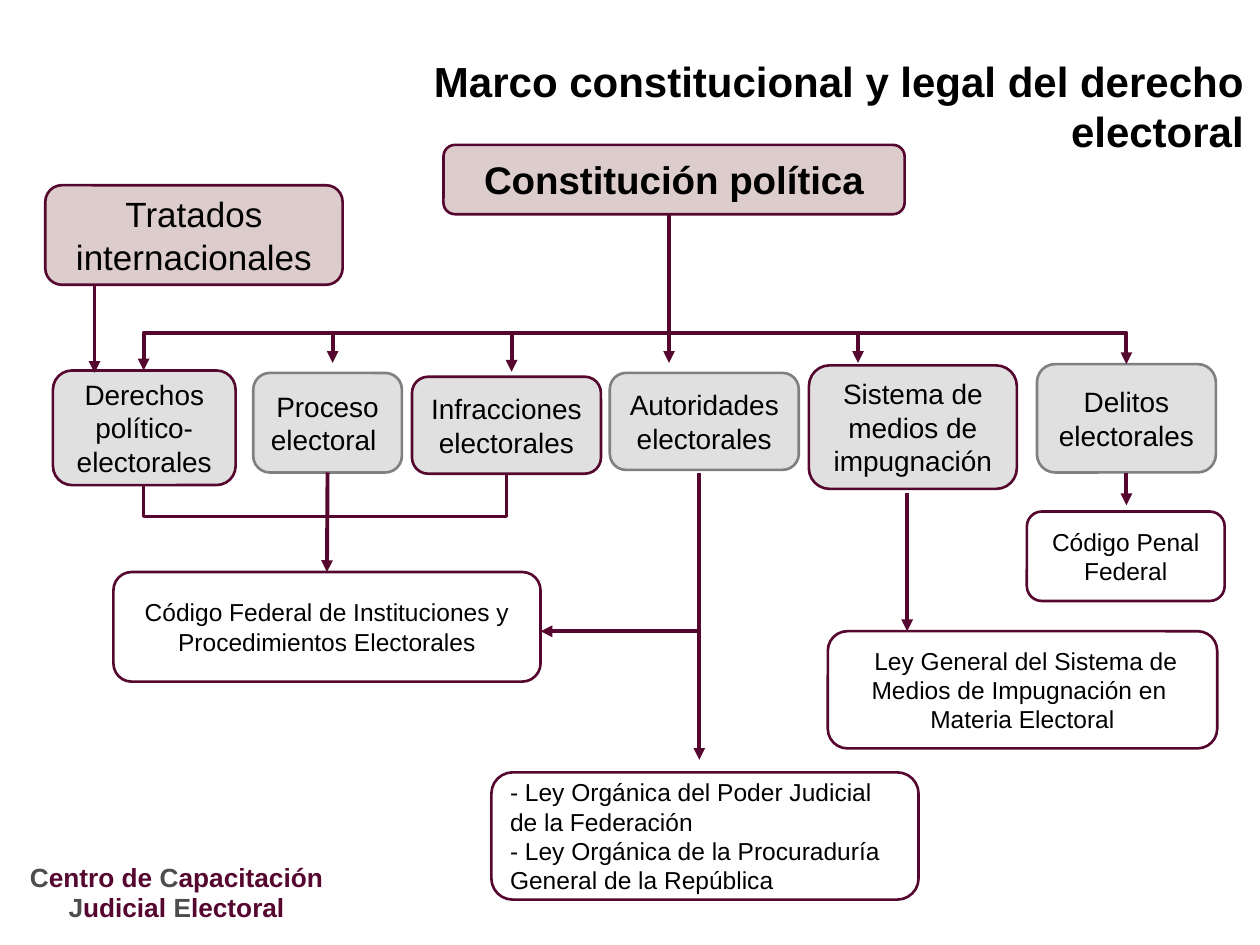
from dataclasses import dataclass

from lxml import etree
from pptx import Presentation
from pptx.dml.color import RGBColor
from pptx.enum.shapes import MSO_CONNECTOR, MSO_SHAPE
from pptx.enum.text import MSO_ANCHOR, PP_ALIGN
from pptx.oxml.ns import qn
from pptx.util import Inches, Pt

LINE, ELBOW = MSO_CONNECTOR.STRAIGHT, MSO_CONNECTOR.ELBOW
ROUND = MSO_SHAPE.ROUNDED_RECTANGLE
MIDDLE, TOP = MSO_ANCHOR.MIDDLE, MSO_ANCHOR.TOP
LEFT, CENTER, RIGHT = PP_ALIGN.LEFT, PP_ALIGN.CENTER, PP_ALIGN.RIGHT


@dataclass(frozen=True)
class Theme:
    font: str = "Arial"
    ink: str = "000000"
    wine: str = "56072F"
    gray: str = "808080"
    dark: str = "4D4D4D"
    rose: tuple = ("580000", 20)
    silver: tuple = ("C0C0C0", 49)
    white: tuple = ("FFFFFF", 100)
    title: int = 24
    head: int = 22
    side: int = 20
    topic: int = 16
    foot: int = 15
    law: int = 14
    edge: float = 1.5
    link: float = 2.25


class Chart:
    def __init__(self, slide, theme):
        self.slide = slide
        self.theme = theme

    def fill_text(self, shape, lines, size, align=CENTER, bold=False, anchor=MIDDLE, space=None):
        frame = shape.text_frame
        frame.word_wrap = True
        frame.vertical_anchor = anchor
        for i, runs in enumerate(lines):
            para = frame.paragraphs[0] if i == 0 else frame.add_paragraph()
            para.alignment = align
            para.line_spacing = space
            for text, color in runs:
                run = para.add_run()
                run.text = text
                run.font.name = self.theme.font
                run.font.size = Pt(size)
                run.font.bold = bold
                run.font.color.rgb = RGBColor.from_string(color)

    def label(self, area, lines, size, align, space=None):
        shape = self.slide.shapes.add_textbox(*map(Inches, area))
        self.fill_text(shape, lines, size, align, True, TOP, space)

    def box(self, area, lines, size, fill, edge=None, align=CENTER, bold=False):
        shape = self.slide.shapes.add_shape(ROUND, *map(Inches, area))
        shape.shadow.inherit = False
        color, alpha = fill
        shape.fill.solid()
        shape.fill.fore_color.rgb = RGBColor.from_string(color)
        if alpha < 100:
            node = shape._element.spPr.find(qn("a:solidFill"))[0]
            etree.SubElement(node, qn("a:alpha")).set("val", str(alpha * 1000))
        shape.line.color.rgb = RGBColor.from_string(edge or self.theme.wine)
        shape.line.width = Pt(self.theme.edge)
        self.fill_text(shape, [[(line, self.theme.ink)] for line in lines], size, align, bold)
        return shape

    def join(self, kind, start, end, ends=(), width=None):
        link = self.slide.shapes.add_connector(kind, *map(Inches, (*start, *end)))
        link.line.color.rgb = RGBColor.from_string(self.theme.wine)
        link.line.width = Pt(width or self.theme.link)
        line = link._element.spPr.find(qn("a:ln"))
        for tag in ends:
            etree.SubElement(line, qn(tag)).set("type", "triangle")
        etree.SubElement(link._element.spPr, qn("a:effectLst"))
        return link

    def arrow(self, start, end, source=None, target=None):
        link = self.join(LINE, start, end, ["a:tailEnd"])
        if source:
            link.begin_connect(source, 2)
        if target:
            link.end_connect(target, 0)

    def fork(self, start, end, bar, ends=(), width=None):
        (x1, y1), (x2, y2) = start, end
        wide, high = y1 - y2, x2 - x1
        left, top = (x1 + x2 - wide) / 2, (y1 + y2 - high) / 2
        link = self.join(ELBOW, (left + wide, top + high), (left, top), ends, width)
        props = link._element.spPr
        props.find(qn("a:xfrm")).set("rot", "5400000")
        guide = etree.SubElement(props.find(qn("a:prstGeom")).find(qn("a:avLst")), qn("a:gd"))
        guide.set("name", "adj1")
        guide.set("fmla", f"val {round((y1 - bar) / wide * 100000)}")


def main():
    deck = Presentation()
    deck.slide_width, deck.slide_height = Inches(10), Inches(7.5)
    theme = Theme()
    chart = Chart(deck.slides.add_slide(deck.slide_layouts[6]), theme)

    dark, wine = theme.dark, theme.wine
    chart.label((0.09, 6.8, 2.62, 0.55), [
        [("C", dark), ("entro de ", wine), ("C", dark), ("apacitación", wine)],
        [("J", dark), ("udicial ", wine), ("E", dark), ("lectoral", wine)],
    ], theme.foot, CENTER, 0.96)
    chart.label((2.17, 0.39, 7.8, 0.9),
                [[("Marco constitucional y legal del derecho electoral", theme.ink)]],
                theme.title, RIGHT)

    chart.box((3.52, 1.15, 3.66, 0.55), ["Constitución política"],
              theme.head, theme.rose, bold=True)
    chart.box((0.36, 1.47, 2.36, 0.79), ["Tratados internacionales"], theme.side, theme.rose)

    topics = [
        ((0.42, 2.94, 1.45, 0.91), "Derechos político-electorales", wine),
        ((2.01, 2.96, 1.18, 0.79), "Proceso electoral ", theme.gray),
        ((3.27, 2.99, 1.5, 0.77), "Infracciones electorales", wine),
        ((4.84, 2.96, 1.5, 0.77), "Autoridades electorales", theme.gray),
        ((6.42, 2.9, 1.65, 0.98), "Sistema de medios de impugnación", wine),
        ((8.23, 2.89, 1.42, 0.86), "Delitos electorales", theme.gray),
    ]
    cells = [chart.box(area, [text], theme.topic, theme.silver, edge)
             for area, text, edge in topics]

    laws = [
        ((0.9, 4.54, 3.39, 0.87),
         ["Código Federal de Instituciones y Procedimientos Electorales"], CENTER),
        ((6.57, 5.01, 3.09, 0.93),
         [" Ley General del Sistema de Medios de Impugnación en ", "Materia Electoral"], CENTER),
        ((8.15, 4.06, 1.57, 0.71), ["Código Penal Federal"], CENTER),
        ((3.9, 6.13, 3.39, 1.01),
         ["- Ley Orgánica del Poder Judicial de la Federación",
          "- Ley Orgánica de la Procuraduría General de la República"], LEFT),
    ]
    codes = [chart.box(area, lines, theme.law, theme.white, align=align)
             for area, lines, align in laws]

    bar = 2.64
    chart.join(LINE, (5.31, 1.7), (5.31, bar))
    chart.fork((1.14, 2.94), (8.94, 2.89), bar, ["a:headEnd", "a:tailEnd"])
    for x, y in [(2.64, 2.88), (4.06, 2.95), (5.31, 2.88), (6.81, 2.88)]:
        chart.arrow((x, bar), (x, y))
    chart.arrow((0.75, 2.26), (0.75, 2.96))

    chart.fork((1.14, 3.85), (4.02, 3.77), 4.1, width=2)
    chart.arrow((2.6, 3.75), (2.6, 4.54), cells[1], codes[0])
    chart.arrow((8.94, 3.75), (8.94, 4.01), cells[5])
    chart.arrow((7.2, 3.91), (7.2, 5.01))
    chart.arrow((5.55, 3.75), (5.55, 6.03))
    chart.arrow((5.55, 5.01), (4.29, 5.01))

    deck.save("out.pptx")


if __name__ == "__main__":
    main()
